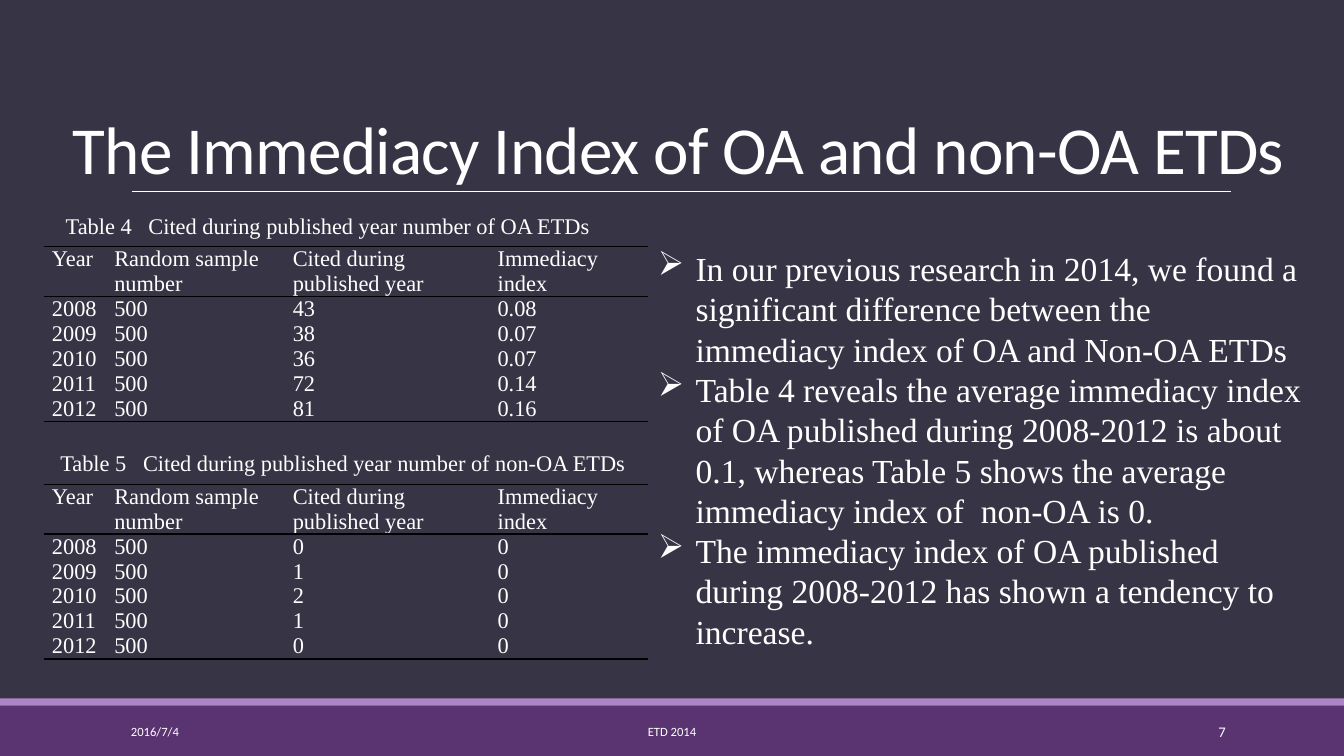
from lxml import etree
from pptx import Presentation
from pptx.dml.color import RGBColor
from pptx.enum.shapes import MSO_CONNECTOR, MSO_SHAPE
from pptx.enum.text import MSO_ANCHOR, PP_ALIGN
from pptx.oxml.ns import qn
from pptx.util import Cm, Pt

LEFT, CENTER, RIGHT = PP_ALIGN.LEFT, PP_ALIGN.CENTER, PP_ALIGN.RIGHT
TOP, MIDDLE, BOTTOM = MSO_ANCHOR.TOP, MSO_ANCHOR.MIDDLE, MSO_ANCHOR.BOTTOM
SANS, SERIF = "Calibri", "Times New Roman"
COLORS = {"background": "373545", "footer": "5A3471", "accent": "AD84C6",
          "text": "FFFFFF", "border": "000000"}


def color(name):
    return RGBColor.from_string(COLORS[name])


def write(frame, text, size, font, align=LEFT, anchor=TOP, spacing=None):
    frame.word_wrap = True
    frame.vertical_anchor = anchor
    frame.text = text
    for para in frame.paragraphs:
        para.alignment = align
        para.line_spacing = spacing
        para.font.size = Pt(size)
        para.font.name = font
        para.font.color.rgb = color("text")


deck = Presentation()
deck.slide_width, deck.slide_height = Cm(33.87), Cm(19.05)
page = deck.slides.add_slide(deck.slide_layouts[6])
page.background.fill.solid()
page.background.fill.fore_color.rgb = color("background")

# Footer bands
for top, height, name in [(17.78, 1.27, "footer"), (17.6, 0.18, "accent")]:
    band = page.shapes.add_shape(MSO_SHAPE.RECTANGLE, 0, Cm(top),
                                 deck.slide_width, Cm(height))
    band.shadow.inherit = False
    band.fill.solid()
    band.fill.fore_color.rgb = color(name)
    band.line.fill.background()

# Rule under the title
rule = page.shapes.add_connector(MSO_CONNECTOR.STRAIGHT, Cm(3.33), Cm(4.83),
                                 Cm(31.01), Cm(4.83))
rule.line.color.rgb = color("text")
rule.line.width = Pt(0.5)
etree.SubElement(rule._element.spPr, qn("a:effectLst"))

# Title
title = page.shapes.add_textbox(Cm(1.5), Cm(0.84), Cm(31.19), Cm(4.04))
write(title.text_frame, "The Immediacy Index of OA and non-OA ETDs", 48, SANS,
      CENTER, BOTTOM, 0.85)
title.text_frame.paragraphs[0].runs[0].font._element.set("spc", "-50")

# Footer texts
for left, width, text, size, align in [
        (3.05, 6.86, "2016/7/4", 9, LEFT),
        (27.51, 3.63, "7", 10.5, RIGHT),
        (10.24, 13.39, "ETD 2014", 9, CENTER)]:
    box = page.shapes.add_textbox(Cm(left), Cm(17.93), Cm(width), Cm(1.02))
    write(box.text_frame, text, size, SANS, align, MIDDLE)

# Tables with their captions
HEADERS = ["Year", "Random sample number", "Cited during published year",
           "Immediacy index"]
YEARS = ["2008", "2009", "2010", "2011", "2012"]
SAMPLES = ["500"] * len(YEARS)
COLUMN_WIDTHS = [1.57, 4.5, 5.16, 3.99]
ROW_HEIGHTS = [1.25, 3.15]
TABLES = [
    ("Table 4   Cited during published year number of OA ETDs ",
     0.73, 5.23, 6.21,
     ["43", "38", "36", "72", "81"], ["0.08", "0.07", "0.07", "0.14", "0.16"]),
    ("Table 5   Cited during published year number of non-OA ETDs ",
     1.11, 11.2, 12.2,
     ["0", "1", "2", "1", "0"], ["0"] * len(YEARS)),
]
for caption, caption_left, caption_top, table_top, cited, index in TABLES:
    box = page.shapes.add_textbox(Cm(caption_left), Cm(caption_top), Cm(15.2), Cm(1.19))
    write(box.text_frame, caption, 16, SERIF, CENTER)

    table = page.shapes.add_table(2, len(HEADERS), Cm(1.12), Cm(table_top),
                                  Cm(sum(COLUMN_WIDTHS)), Cm(sum(ROW_HEIGHTS))).table
    table.first_row = table.horz_banding = False
    for column, width in zip(table.columns, COLUMN_WIDTHS):
        column.width = Cm(width)
    for row, height in zip(table.rows, ROW_HEIGHTS):
        row.height = Cm(height)

    body = ["\n".join(values) for values in (YEARS, SAMPLES, cited, index)]
    for cell, text in zip(table.iter_cells(), HEADERS + body):
        cell.margin_left = cell.margin_right = Cm(0.19)
        cell.margin_top = cell.margin_bottom = 0
        write(cell.text_frame, text, 16, SERIF, spacing=Pt(17.8))
        # Horizontal borders only
        properties = cell._tc.get_or_add_tcPr()
        for side in ("L", "R", "T", "B"):
            border = etree.SubElement(properties, qn(f"a:ln{side}"), w=str(Pt(1)))
            if side in "LR":
                etree.SubElement(border, qn("a:noFill"))
            else:
                fill = etree.SubElement(border, qn("a:solidFill"))
                etree.SubElement(fill, qn("a:srgbClr"), val=COLORS["border"])
        cell.fill.background()

# Findings
FINDINGS = [
    "In our previous research in 2014, we found a significant difference between "
    "the immediacy index of OA and Non-OA ETDs",
    "Table 4 reveals the average immediacy index of OA published during 2008-2012 "
    "is about 0.1, whereas Table 5 shows the average immediacy index of  non-OA is 0.",
    "The immediacy index of OA published during 2008-2012 has shown a tendency to "
    "increase.",
]
findings = page.shapes.add_textbox(Cm(16.33), Cm(6.12), Cm(16.84), Cm(10.52))
write(findings.text_frame, "\n".join(FINDINGS), 24, SERIF, spacing=Pt(28.8))
for para in findings.text_frame.paragraphs:
    properties = para._p.get_or_add_pPr()
    properties.set("marL", str(Cm(0.95)))
    properties.set("indent", str(-Cm(0.95)))
    bullet = etree.Element(qn("a:buChar"), char="➢")
    properties.find(qn("a:defRPr")).addprevious(bullet)

deck.save("out.pptx")
